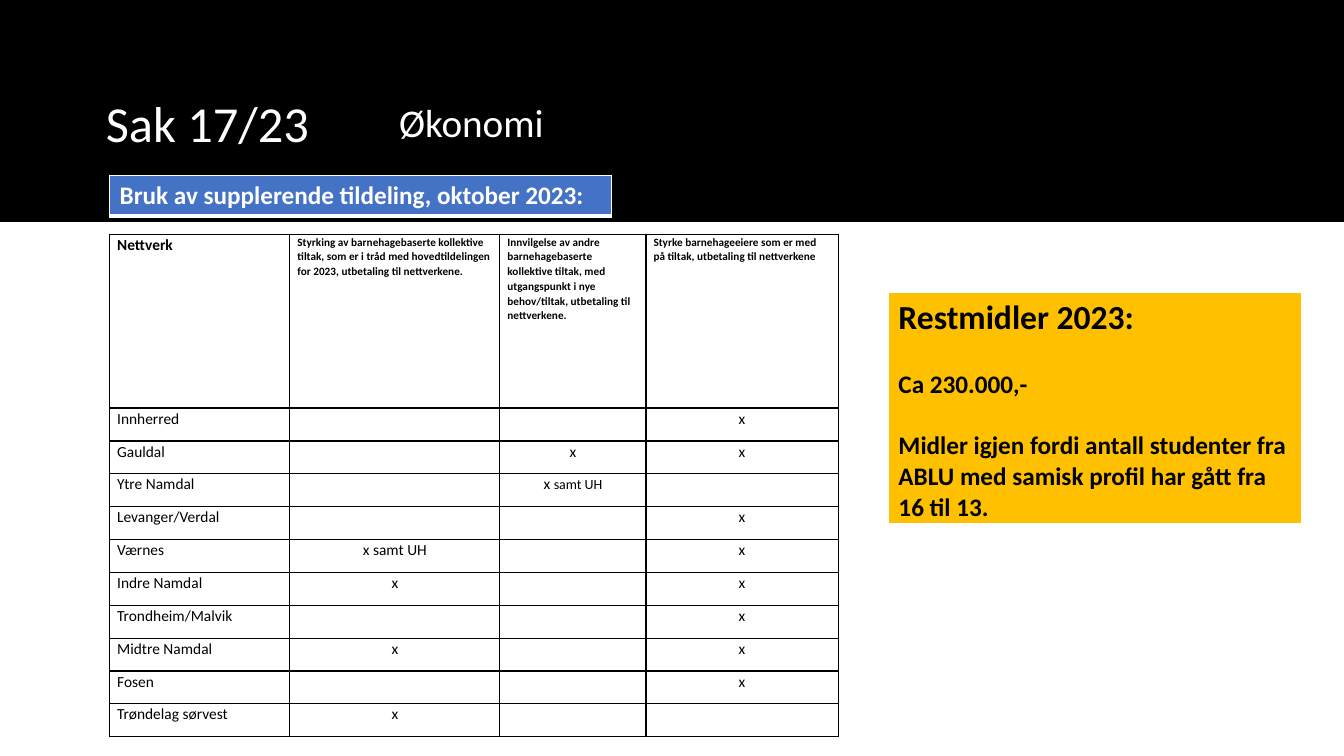
from collections import namedtuple
from dataclasses import dataclass

from lxml.etree import SubElement
from pptx import Presentation
from pptx.dml.color import RGBColor
from pptx.enum.shapes import MSO_SHAPE
from pptx.enum.text import MSO_ANCHOR, MSO_AUTO_SIZE, PP_ALIGN
from pptx.oxml.ns import qn
from pptx.util import Pt

Box = namedtuple("Box", "left top width height")


@dataclass(frozen=True)
class Theme:
    font: str = "Calibri"
    black: str = "000000"
    white: str = "FFFFFF"
    blue: str = "4472C4"
    amber: str = "FFC000"
    title: float = 36
    topic: float = 28
    heading: float = 24
    body: float = 18
    cell: float = 11
    small: float = 10
    criterion: float = 8


THEME = Theme()
GRID_LINES = {side: (THEME.black, 1) for side in ("lnL", "lnR", "lnT", "lnB")}
CALLOUT_LINES = {side: (THEME.white, 1) for side in ("lnL", "lnR", "lnT")}
CALLOUT_LINES["lnB"] = (THEME.white, 3)

CRITERIA = [
    "Styrking av barnehagebaserte kollektive tiltak, som er i tråd med "
    "hovedtildelingen for 2023, utbetaling til nettverkene.",
    "Innvilgelse av andre barnehagebaserte kollektive tiltak, med utgangspunkt "
    "i nye behov/tiltak, utbetaling til nettverkene.",
    "Styrke barnehageeiere som er med på tiltak, utbetaling til nettverkene",
]
NETWORKS = [
    ("Innherred", "", "", "x"),
    ("Gauldal", "", "x", "x"),
    ("Ytre Namdal", "", "x samt UH", ""),
    ("Levanger/Verdal", "", "", "x"),
    ("Værnes", "x samt UH", "", "x"),
    ("Indre Namdal", "x", "", "x"),
    ("Trondheim/Malvik", "", "", "x"),
    ("Midtre Namdal", "x", "", "x"),
    ("Fosen", "", "", "x"),
    ("Trøndelag sørvest", "x", "", ""),
]


def apply(target, **values):
    for name, value in values.items():
        setattr(target, name, value)


def place(box):
    return [Pt(length) for length in box]


def style_font(font, size, color=THEME.black, bold=False):
    apply(font, name=THEME.font, size=Pt(size), bold=bold)
    font.color.rgb = RGBColor.from_string(color)


def write(paragraph, text, size, color=THEME.black, bold=False):
    style_font(paragraph.font, size, color, bold)
    if text:
        run = paragraph.add_run()
        run.text = text
        style_font(run.font, size, color, bold)


def set_borders(cell, lines):
    properties = cell._tc.get_or_add_tcPr()
    for index, side in enumerate(("lnL", "lnR", "lnT", "lnB")):
        color, width = lines[side]
        line = SubElement(properties, qn(f"a:{side}"), w=str(Pt(width)))
        properties.insert(index, line)
        SubElement(SubElement(line, qn("a:solidFill")), qn("a:srgbClr"), val=color)


def add_plain_table(slide, box, rows, columns):
    table = slide.shapes.add_table(rows, columns, *place(box)).table
    apply(table, first_row=False, horz_banding=False)
    return table


# Black band with case number and topic
def add_header(slide, box):
    band = slide.shapes.add_shape(MSO_SHAPE.RECTANGLE, *place(box))
    band.shadow.inherit = False
    band.fill.solid()
    band.fill.fore_color.rgb = RGBColor.from_string(THEME.black)
    band.line.fill.background()
    slide.shapes._spTree.insert(2, band._element)

    case = slide.shapes.title
    left, top, width, height = place(Box(box.left + 68.4, box.top + 27.4, 877, 85))
    apply(case, left=left, top=top, width=width, height=height)
    apply(case.text_frame, vertical_anchor=MSO_ANCHOR.BOTTOM,
          auto_size=MSO_AUTO_SIZE.NONE)
    write(case.text_frame.paragraphs[0], "Sak 17/23", THEME.title, THEME.white)
    case.text_frame.paragraphs[0].alignment = PP_ALIGN.LEFT

    topic_box = Box(box.left + 278, box.top + 67, 425.5, 46)
    topic = slide.shapes.add_textbox(*place(topic_box)).text_frame
    topic.word_wrap = True
    write(topic.paragraphs[0], "Økonomi", THEME.topic, THEME.white)


# Networks against the three uses of the grant
def add_network_table(slide, box):
    header_height = 124
    table = add_plain_table(slide, box, len(NETWORKS) + 1, len(CRITERIA) + 1)
    for column, width in zip(table.columns, (128.8, 150, 104.4, 137.2)):
        column.width = Pt(width)
    for row in table.rows:
        row.height = Pt((box.height - header_height) / len(NETWORKS))
    table.rows[0].height = Pt(header_height)

    for row, texts in enumerate([("Nettverk", *CRITERIA), *NETWORKS]):
        for column, text in enumerate(texts):
            cell = table.cell(row, column)
            apply(cell, margin_left=Pt(5.4), margin_right=Pt(5.4),
                  margin_top=0, margin_bottom=0)
            cell.fill.background()
            set_borders(cell, GRID_LINES)
            entry = cell.text_frame.paragraphs[0]
            apply(entry, line_spacing=1.07, space_after=Pt(8))
            is_header, is_mark = row == 0, row > 0 and column > 0
            size = THEME.criterion if is_header and column else THEME.cell
            write(entry, text, size, bold=is_header)
            if is_mark:
                entry.alignment = PP_ALIGN.CENTER
            if texts[0] == "Ytre Namdal" and is_mark and text:
                entry.runs[0].text = "x "
                write(entry, "samt UH", THEME.small)


# Coloured one-cell table; lines are (text, size, space before)
def add_callout(slide, box, fill, color, lines):
    table = add_plain_table(slide, box, 1, 1)
    cell = table.cell(0, 0)
    cell.fill.solid()
    cell.fill.fore_color.rgb = RGBColor.from_string(fill)
    set_borders(cell, CALLOUT_LINES)
    frame = cell.text_frame
    for index, (text, size, gap) in enumerate(lines):
        paragraph = frame.add_paragraph() if index else frame.paragraphs[0]
        paragraph.space_before = Pt(gap)
        write(paragraph, text, size, color, bold=True)


def main():
    deck = Presentation()
    apply(deck, slide_width=Pt(960), slide_height=Pt(540))
    slide = deck.slides.add_slide(deck.slide_layouts.get_by_name("Title Only"))

    add_header(slide, Box(0, 0, 960, 158.5))
    add_network_table(slide, Box(78.3, 167.5, 520.4, 358.8))
    add_callout(slide, Box(78.3, 125.3, 358.6, 29.2), THEME.blue, THEME.white, [
        ("Bruk av supplerende tildeling, oktober 2023:", THEME.body, 0),
    ])
    add_callout(slide, Box(634.6, 208.7, 295, 166), THEME.amber, THEME.black, [
        ("Restmidler 2023:", THEME.heading, 0),
        ("Ca 230.000,-", THEME.body, 22),
        ("Midler igjen fordi antall studenter fra ABLU med samisk profil "
         "har gått fra 16 til 13.", THEME.body, 22),
    ])
    deck.save("out.pptx")


if __name__ == "__main__":
    main()
